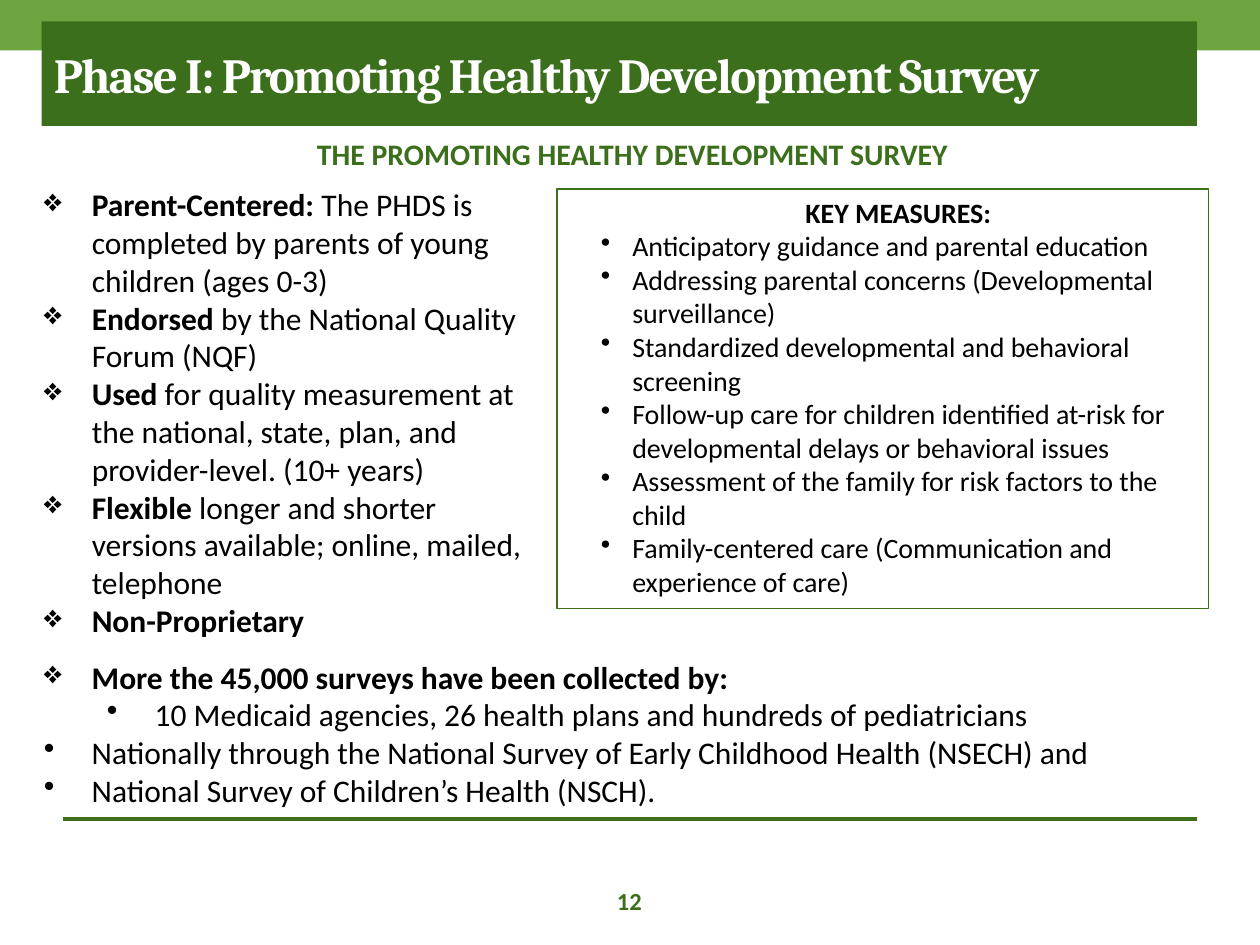
from lxml.etree import SubElement
from pptx import Presentation
from pptx.dml.color import RGBColor
from pptx.enum.shapes import MSO_CONNECTOR as Connector, MSO_SHAPE as Shape
from pptx.enum.text import MSO_ANCHOR as Anchor, PP_ALIGN as Align
from pptx.oxml.ns import qn
from pptx.util import Inches, Pt

WIDTH, HEIGHT = 10, 7.5
GREEN, LIGHT_GREEN, WHITE, BLACK = "3B6F1B", "6FA541", "FFFFFF", "000000"

TITLE = "Phase I: Promoting Healthy Development Survey"
SUBTITLE = "THE PROMOTING HEALTHY DEVELOPMENT SURVEY"
PAGE = "12"
FEATURES = [
    ("Parent-Centered:", " The PHDS is completed by parents of young children (ages 0-3)"),
    ("Endorsed ", "by the National Quality Forum (NQF)"),
    ("Used", " for quality measurement at the national, state, plan, and provider-level. (10+ years)"),
    ("Flexible ", "longer and shorter versions available; online, mailed, telephone"),
    ("Non-Proprietary", ""),
]
MEASURES_HEADING = "KEY MEASURES:"
MEASURES = [
    "Anticipatory guidance and parental education",
    "Addressing parental concerns (Developmental surveillance)",
    "Standardized developmental and behavioral screening",
    "Follow-up care for children identified at-risk for developmental delays or behavioral issues",
    "Assessment of the family for risk factors to the child",
    "Family-centered care (Communication and experience of care)",
]
REACH_HEADING = "More the 45,000 surveys have been collected by:"
REACH_AGENCIES = "10 Medicaid agencies, 26 health plans and hundreds of pediatricians"
REACH_SURVEYS = [
    "Nationally through the National Survey of Early Childhood Health (NSECH) and",
    "National Survey of Children’s Health (NSCH).",
]


def color(hex_value):
    return RGBColor.from_string(hex_value)


def add_box(slide, area, fill=None, line=None, anchor=Anchor.TOP):
    box = slide.shapes.add_shape(Shape.RECTANGLE, *map(Inches, area))
    box.shadow.inherit = False
    if fill:
        box.fill.solid()
        box.fill.fore_color.rgb = color(fill)
    else:
        box.fill.background()
    if line:
        box.line.color.rgb = color(line)
        box.line.width = Pt(0.75)
    else:
        box.line.fill.background()
    box.text_frame.vertical_anchor = anchor
    return box.text_frame


def add_text_area(slide, area, anchor=Anchor.TOP):
    frame = slide.shapes.add_textbox(*map(Inches, area)).text_frame
    frame.vertical_anchor = anchor
    return frame


def write(frame, text, bold="", size=18, ink=BLACK, font="Calibri", align=Align.LEFT,
          bullet=None, indent=0, hang=0, level=0, line_spacing=None, after=None, tracking=None):
    frame.word_wrap = True
    first = frame.paragraphs[0]
    paragraph = frame.add_paragraph() if first.runs else first
    paragraph.alignment = align
    paragraph.level = level
    if line_spacing:
        paragraph.line_spacing = line_spacing
    if after:
        paragraph.space_after = Pt(after)
    properties = paragraph._p.get_or_add_pPr()
    properties.set("marL", str(Inches(indent)))
    properties.set("indent", str(Inches(-hang)))
    if bullet:
        SubElement(properties, qn("a:buChar"), char=bullet)
    else:
        SubElement(properties, qn("a:buNone"))
    for part, is_bold in ((bold, True), (text, False)):
        if part:
            run = paragraph.add_run()
            run.text = part
            run.font.size = Pt(size)
            run.font.name = font
            run.font.bold = is_bold
            run.font.color.rgb = color(ink)
            if tracking:
                run._r.get_or_add_rPr().set("spc", str(tracking * 100))


def add_rule(slide, left, right, y):
    rule = slide.shapes.add_connector(
        Connector.STRAIGHT, Inches(left), Inches(y), Inches(right), Inches(y))
    rule.line.color.rgb = color(GREEN)
    rule.line.width = Pt(2.75)
    SubElement(rule._element.spPr, qn("a:effectLst"))


def main():
    deck = Presentation()
    deck.slide_width, deck.slide_height = Inches(WIDTH), Inches(HEIGHT)
    slide = deck.slides.add_slide(deck.slide_layouts[6])

    add_box(slide, (0, 0, WIDTH, 0.4), fill=LIGHT_GREEN)
    add_rule(slide, 0.05 * WIDTH, 0.95 * WIDTH, 6.5)

    title = add_box(slide, (0.33, 0.17, 9.17, 0.83), fill=GREEN, anchor=Anchor.MIDDLE)
    write(title, "", bold=TITLE, size=28, ink=WHITE, font="Cambria", tracking=-1)

    page = add_text_area(slide, (3.83, 6.95, 2.33, 0.4), anchor=Anchor.MIDDLE)
    write(page, "", bold=PAGE, size=14, ink=GREEN, align=Align.CENTER)

    main_item = dict(indent=0.38, hang=0.38)
    features = add_text_area(slide, (0.25, 1.42, 4.08, 4.09))
    for lead, detail in FEATURES:
        write(features, detail, bold=lead, bullet="❖", **main_item)

    subtitle = add_text_area(slide, (0.17, 1.08, 9.58, 0.42))
    write(subtitle, "", bold=SUBTITLE, size=17, ink=GREEN, align=Align.CENTER,
          indent=0.12, line_spacing=0.8, after=6)

    measure_item = dict(size=16, indent=0.5, hang=0.25, level=1)
    measures = add_box(slide, (4.42, 1.5, 5.17, 3.33), line=GREEN)
    write(measures, "", bold=MEASURES_HEADING, align=Align.CENTER, **measure_item)
    for measure in MEASURES:
        write(measures, measure, bullet="•", **measure_item)

    reach = add_text_area(slide, (0.25, 5.17, 9.17, 1.31))
    write(reach, "", bold=REACH_HEADING, bullet="❖", **main_item)
    write(reach, REACH_AGENCIES, bullet="•", indent=0.88, hang=0.38, level=1)
    for survey in REACH_SURVEYS:
        write(reach, survey, bullet="•", **main_item)

    deck.save("out.pptx")


if __name__ == "__main__":
    main()
